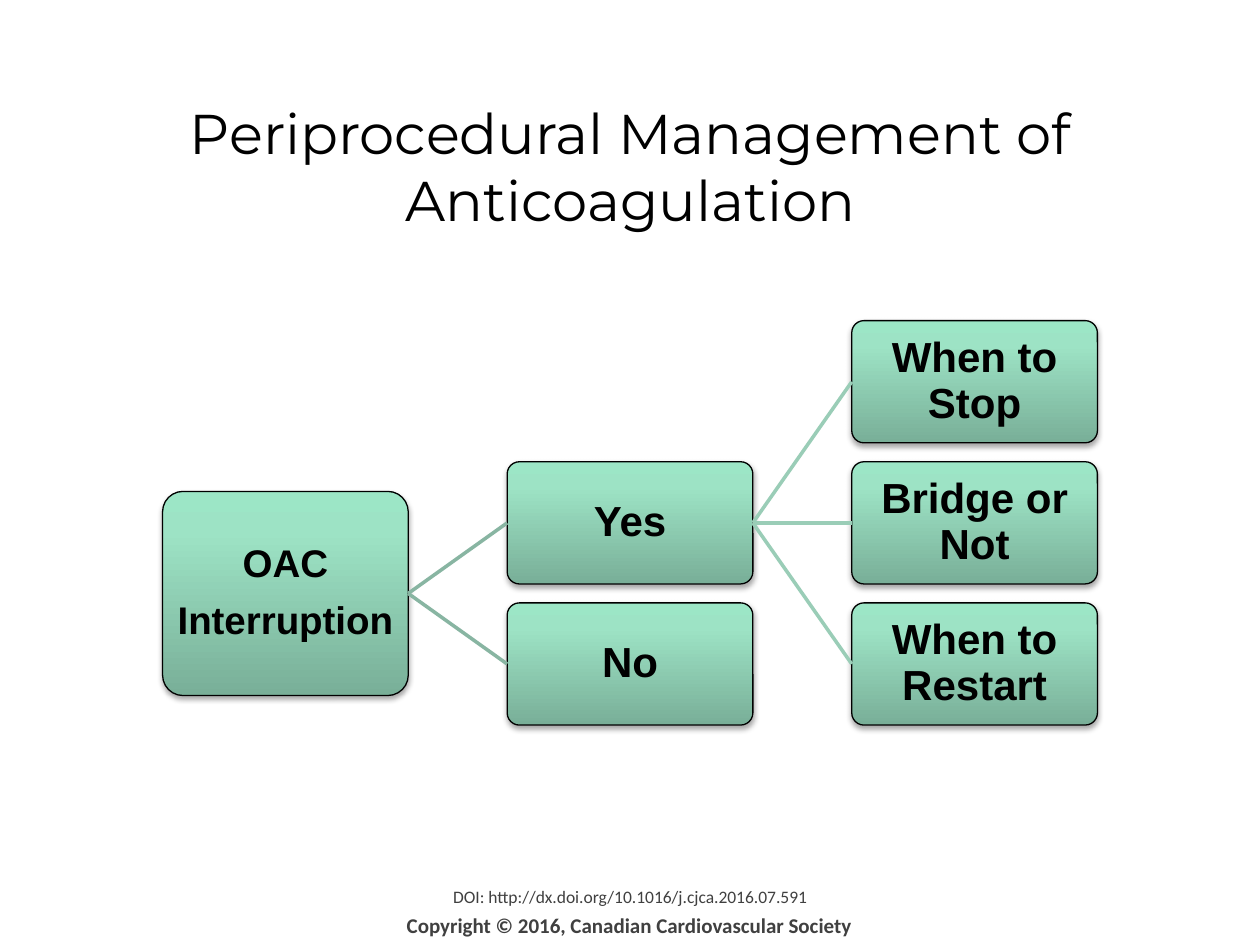
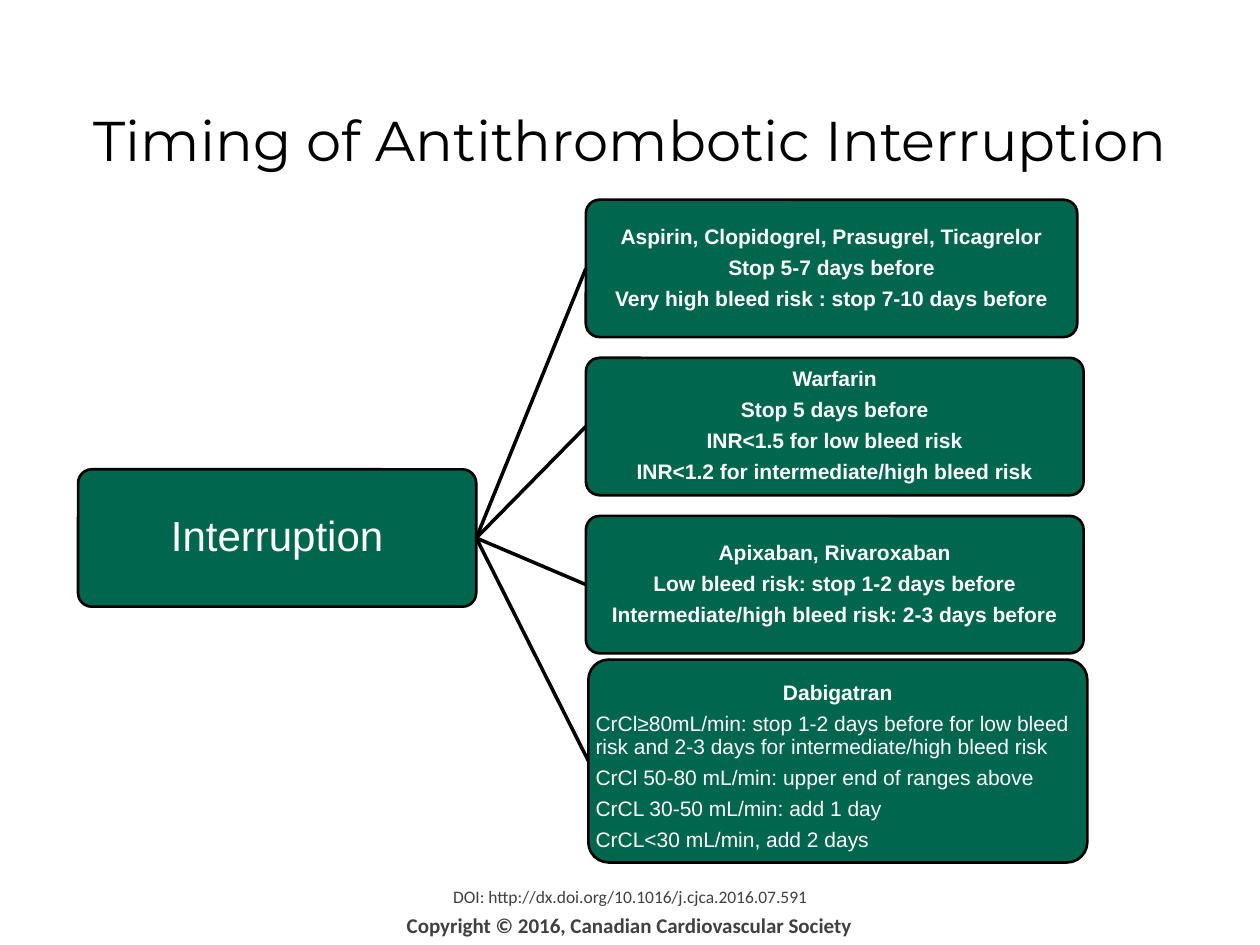
import pptx
import pptx.dml.color
import pptx.enum.shapes
import pptx.enum.text
import pptx.oxml
import pptx.oxml.ns
import pptx.util
from pptx.util import Inches

COLORS = {
    "ink": "000000", "white": "FFFFFF", "footer": "404040", "green": "00664D",
    "mint_dark": "79AF98", "mint": "9DE3C5", "mint_light": "9CE6C6",
    "link_first": "88B5A2", "link_second": "9ACDB7",
}
BODY_FONT, TITLE_FONT, FOOTER_FONT = "Arial", "Montserrat", "Calibri"
ALIGN = pptx.enum.text.PP_ALIGN
ANCHOR = pptx.enum.text.MSO_ANCHOR
NAMESPACE = pptx.oxml.ns.nsdecls("a")

GRADIENT_XML = (
    f'<a:gradFill {NAMESPACE} rotWithShape="1"><a:gsLst>'
    + "".join(f'<a:gs pos="{position}"><a:srgbClr val="{COLORS[name]}"/></a:gs>'
              for position, name in ((0, "mint_dark"), (80000, "mint"), (100000, "mint_light")))
    + '</a:gsLst><a:lin ang="16200000" scaled="0"/></a:gradFill>')
SHADOW_XML = (
    f'<a:effectLst {NAMESPACE}><a:outerShdw blurRad="40000" dist="23000" dir="5400000" '
    f'rotWithShape="0"><a:srgbClr val="{COLORS["ink"]}"><a:alpha val="35000"/></a:srgbClr>'
    '</a:outerShdw></a:effectLst>')


def rgb(name):
    return pptx.dml.color.RGBColor.from_string(COLORS[name])


class Deck:
    """Holds the shared style and the current slide."""

    def __init__(self):
        self.presentation = pptx.Presentation()
        self.presentation.slide_width = Inches(10)
        self.presentation.slide_height = Inches(7.5)
        self.slide = None

    def add_slide(self, title, title_top):
        self.slide = self.presentation.slides.add_slide(self.presentation.slide_layouts[6])
        self.text(1.77, 7.19, 6.45, 0.31, "Copyright © 2016, Canadian Cardiovascular Society",
                  FOOTER_FONT, 12, "footer", bold=True, anchor=ANCHOR.TOP)
        self.text(0.55, 6.92, 8.9, 0.39, "DOI: http://dx.doi.org/10.1016/j.cjca.2016.07.591",
                  FOOTER_FONT, 10, "footer")
        self.text(0.2, title_top, 9.61, 0.71, title, TITLE_FONT, 32, "ink")

    def style(self, paragraph, font_name, size, color, bold=False, align=ALIGN.CENTER):
        paragraph.alignment = align
        font = paragraph.font
        font.name, font.size, font.bold = font_name, pptx.util.Pt(size), bold
        font.color.rgb = rgb(color)

    def text(self, left, top, width, height, words, font_name, size, color,
             bold=False, anchor=ANCHOR.MIDDLE):
        shape = self.slide.shapes.add_textbox(
            Inches(left), Inches(top), Inches(width), Inches(height))
        frame = shape.text_frame
        frame.word_wrap, frame.vertical_anchor = True, anchor
        frame.text = words
        self.style(frame.paragraphs[0], font_name, size, color, bold)

    def box(self, left, middle, width, height, lines, size, color="white", bold=True,
            inset=0.01, line_width=1.5, glossy=False):
        """Rounded box centred vertically on middle, one paragraph per line."""
        shape = self.slide.shapes.add_shape(
            pptx.enum.shapes.MSO_SHAPE.ROUNDED_RECTANGLE,
            Inches(left), Inches(middle - height / 2), Inches(width), Inches(height))
        shape.adjustments[0] = 0.1
        properties = shape._element.spPr
        if glossy:
            properties.append(pptx.oxml.parse_xml(GRADIENT_XML))
        else:
            shape.fill.solid()
            shape.fill.fore_color.rgb = rgb("green")
        shape.line.color.rgb = rgb("ink")
        shape.line.width = pptx.util.Pt(line_width)
        if glossy:
            properties.append(pptx.oxml.parse_xml(SHADOW_XML))
        else:
            shape.shadow.inherit = False

        frame = shape.text_frame
        frame.word_wrap, frame.vertical_anchor = True, ANCHOR.MIDDLE
        frame.margin_left = frame.margin_right = Inches(inset)
        frame.margin_top = frame.margin_bottom = Inches(inset)
        frame.text = "\n".join(lines)
        for paragraph in frame.paragraphs:
            paragraph.line_spacing = 0.9
            paragraph.space_after = pptx.util.Pt(round(0.39 * size, 1))
            self.style(paragraph, BODY_FONT, size, color, bold)
        return shape

    def link(self, parent, child, color):
        """Line from the right side of parent to the left side of child."""
        connector = self.slide.shapes.add_connector(
            pptx.enum.shapes.MSO_CONNECTOR.STRAIGHT, 0, 0, 0, 0)
        connector.begin_connect(parent, 3)
        connector.end_connect(child, 1)
        connector.line.color.rgb = rgb(color)
        connector.line.width = pptx.util.Pt(2)
        connector._element.spPr.append(pptx.oxml.parse_xml(f"<a:effectLst {NAMESPACE}/>"))


def add_management_slide(deck):
    deck.add_slide("Periprocedural Management of Anticoagulation", 0.96)
    columns = [1.29 + 2.735 * index for index in range(3)]
    rows = [3.03 + 1.12 * index for index in range(3)]

    def mint_box(column, middle, lines, height=0.97, size=24):
        return deck.box(columns[column], middle, 1.95, height, lines, size, "ink",
                        inset=0.02, line_width=0.75, glossy=True)

    # Decision and its two answers
    root = mint_box(0, 4.71, ["OAC", "Interruption"], height=1.62, size=22)
    yes, no = [mint_box(1, row, [answer]) for row, answer in zip(rows[1:], ("Yes", "No"))]
    for answer in (yes, no):
        deck.link(root, answer, "link_first")

    # Questions that follow a yes
    for row, question in zip(rows, ("When to Stop", "Bridge or Not", "When to Restart")):
        deck.link(yes, mint_box(2, row, [question]), "link_second")


def add_timing_slide(deck):
    deck.add_slide("Timing of Antithrombotic Interruption", 0.75)
    root = deck.box(0.62, 4.27, 3.16, 1.09, ["Interruption"], 24, bold=False, inset=0.02)

    # Drug groups at equal steps
    drug_groups = [
        (3.9, ["Aspirin, Clopidogrel, Prasugrel, Ticagrelor", "Stop 5-7 days before",
               "Very high bleed risk : stop 7-10 days before"]),
        (3.95, ["Warfarin", "Stop 5 days before", "INR<1.5 for low bleed risk",
                "INR<1.2 for intermediate/high bleed risk"]),
        (3.95, ["Apixaban, Rivaroxaban", "Low bleed risk: stop 1-2 days before",
                "Intermediate/high bleed risk: 2-3 days before"]),
    ]
    for index, (width, lines) in enumerate(drug_groups):
        deck.link(root, deck.box(4.65, 2.13 + 1.255 * index, width, 1.09, lines, 12), "ink")

    # Dabigatran, with left-aligned rules by renal function
    dabigatran = deck.box(4.67, 6.04, 3.96, 1.61, [
        "Dabigatran",
        "CrCl≥80mL/min: stop 1-2 days before for low bleed risk and 2-3 days for "
        "intermediate/high bleed risk",
        "CrCl 50-80 mL/min: upper end of ranges above",
        "CrCL 30-50 mL/min: add 1 day",
        "CrCL<30 mL/min, add 2 days"], 12)
    dabigatran.text_frame.margin_top = Inches(0.11)
    for paragraph in dabigatran.text_frame.paragraphs[1:]:
        deck.style(paragraph, BODY_FONT, 12, "white", align=ALIGN.LEFT)
    deck.link(root, dabigatran, "ink")


def main():
    deck = Deck()
    add_management_slide(deck)
    add_timing_slide(deck)
    deck.presentation.save("out.pptx")


if __name__ == "__main__":
    main()
